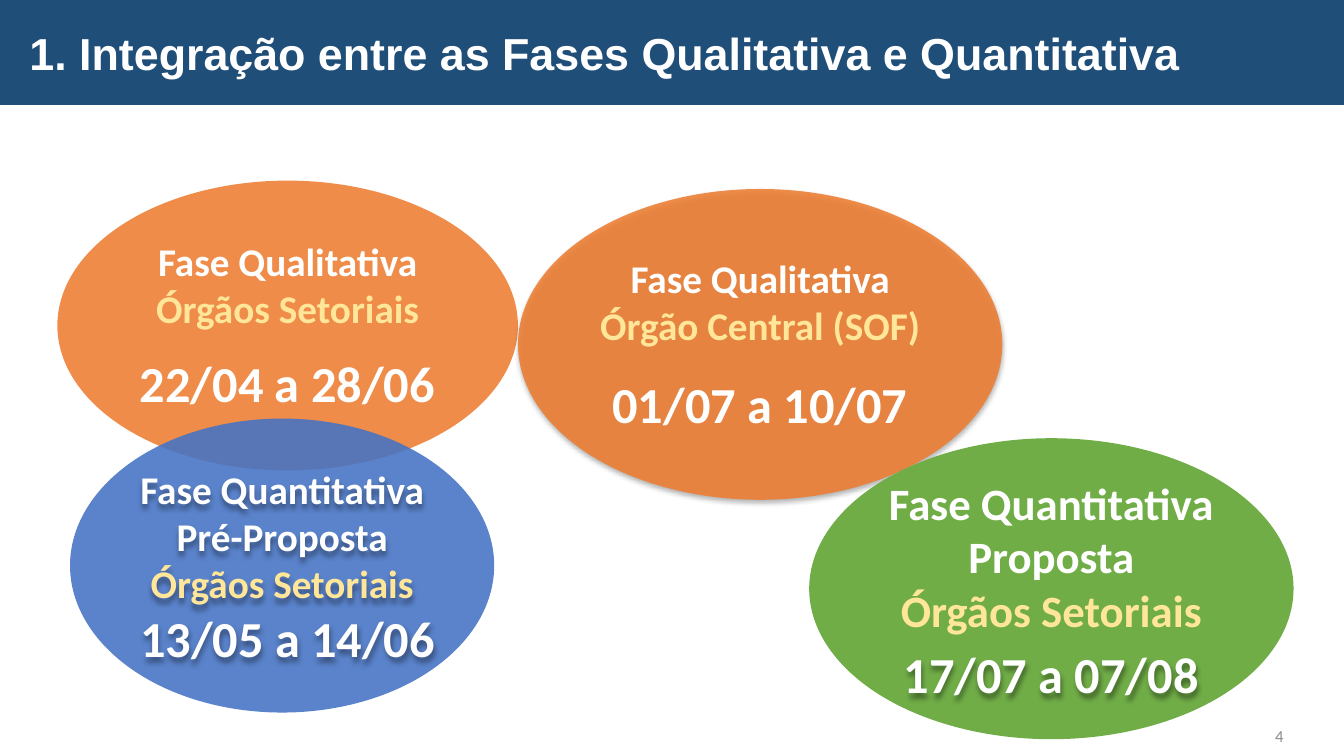
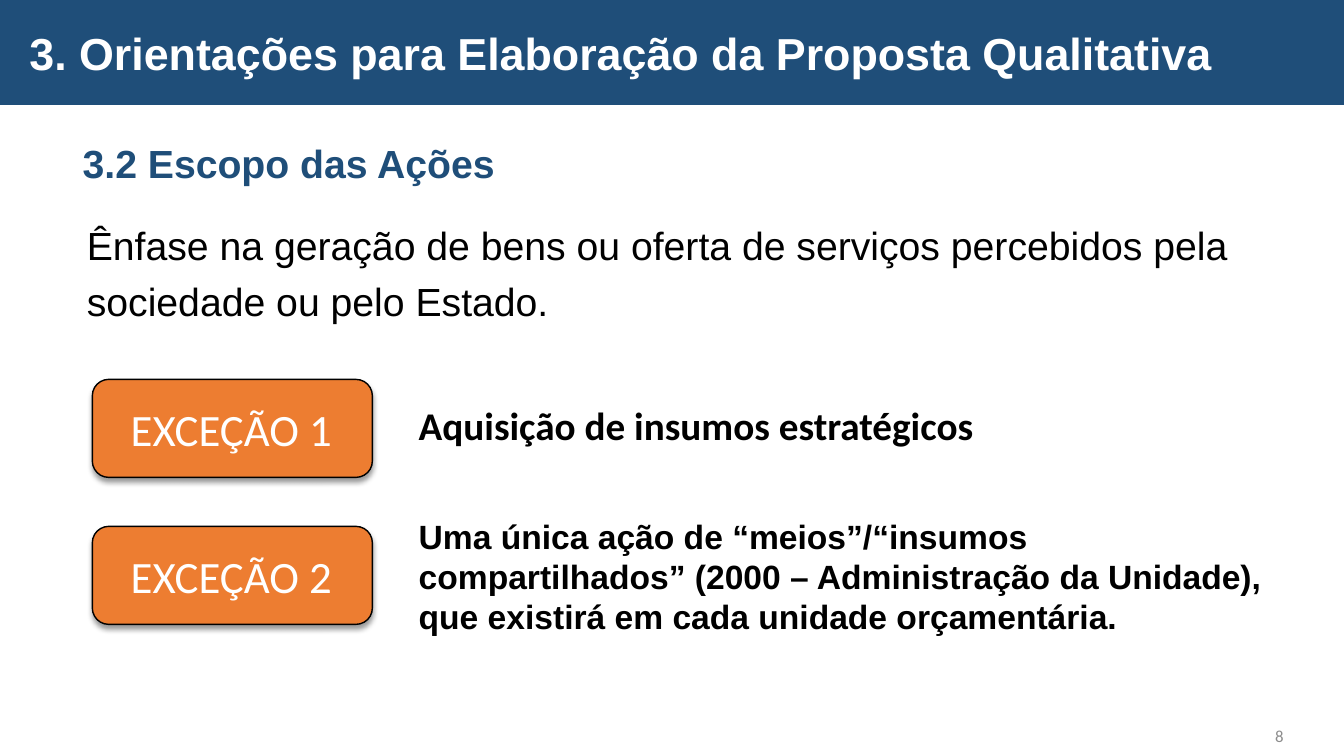
from lxml import etree
from pptx import Presentation
from pptx.dml import color
from pptx.enum import shapes, text
from pptx.oxml import ns
from pptx.util import Pt

COLORS = {
    "navy": "1F4E79", "orange": "ED7D31", "blue": "4472C4", "green": "70AD47",
    "cream": "FFE699", "white": "FFFFFF", "black": "000000", "gray": "8C8C8C",
}
OVAL = shapes.MSO_SHAPE.OVAL
ROUNDED = shapes.MSO_SHAPE.ROUNDED_RECTANGLE
LEFT, CENTER, RIGHT = text.PP_ALIGN.LEFT, text.PP_ALIGN.CENTER, text.PP_ALIGN.RIGHT
MIDDLE, TOP = text.MSO_ANCHOR.MIDDLE, text.MSO_ANCHOR.TOP
TITLE = {"name": "Arial", "size": Pt(32), "bold": True}
SUBTITLE = {"name": "Arial", "size": Pt(28), "bold": True}
BODY = {"name": "Arial", "size": Pt(28), "bold": False}
DETAIL = {"name": "Arial", "size": Pt(24), "bold": True}
PHASE = {"name": "Calibri", "size": Pt(28), "bold": True}
PROPOSAL = {"name": "Calibri", "size": Pt(32), "bold": True}
DATE = {"name": "Calibri", "size": Pt(36), "bold": True}
EXCEPTION = {"name": "Calibri", "size": Pt(32), "bold": False}
PAGE = {"name": "Calibri", "size": Pt(12), "bold": False}
SOFT = (40, 4, 3)
LIGHT = (32, 3.5, 2.2)


def add_box(slide, frame, preset=None, fill=None, opacity=100, outline=None, shadow=None):
    place = [Pt(length) for length in frame]
    if preset is None:
        box = slide.shapes.add_textbox(*place)
    else:
        box = slide.shapes.add_shape(preset, *place)
        box.fill.solid()
        box.fill.fore_color.rgb = color.RGBColor.from_string(COLORS[fill])
        if opacity < 100:
            tint = box.fill._xPr.find(".//" + ns.qn("a:srgbClr"))
            etree.SubElement(tint, ns.qn("a:alpha"), val=str(opacity * 1000))
        if outline:
            box.line.color.rgb = color.RGBColor.from_string(COLORS[outline])
            box.line.width = Pt(1)
        else:
            box.line.fill.background()
    box.shadow.inherit = False
    if shadow:
        strength, blur, distance = shadow
        effects = box._element.spPr.find(ns.qn("a:effectLst"))
        outer = etree.SubElement(
            effects, ns.qn("a:outerShdw"), blurRad=str(Pt(blur)),
            dist=str(Pt(distance)), dir="5400000", rotWithShape="0")
        tint = etree.SubElement(outer, ns.qn("a:srgbClr"), val=COLORS["black"])
        etree.SubElement(tint, ns.qn("a:alpha"), val=str(strength * 1000))
    return box


def write(box, lines, style, align=LEFT, anchor=TOP, inset=7.2, spacing=None):
    frame = box.text_frame
    layout = {"word_wrap": True, "vertical_anchor": anchor, "margin_left": Pt(inset)}
    for name, value in layout.items():
        setattr(frame, name, value)
    for index, (words, tone) in enumerate(lines):
        paragraph = frame.add_paragraph() if index else frame.paragraphs[0]
        paragraph.alignment = align
        if spacing:
            paragraph.line_spacing = Pt(spacing)
        run = paragraph.add_run()
        run.text = words
        for name, value in style.items():
            setattr(run.font, name, value)
        run.font.color.rgb = color.RGBColor.from_string(COLORS[tone])


deck = Presentation()
deck.slide_width, deck.slide_height = Pt(960), Pt(540)

pages = []
for title, number in [
    ("1. Integração entre as Fases Qualitativa e Quantitativa", "4"),
    ("3. Orientações para Elaboração da Proposta Qualitativa", "8"),
]:
    page = deck.slides.add_slide(deck.slide_layouts[6])
    band = add_box(page, (0, 0, 960, 75), shapes.MSO_SHAPE.RECTANGLE, "navy")
    write(band, [(title, "white")], TITLE, anchor=MIDDLE, inset=21)
    footer = add_box(page, (896, 511, 28, 29))
    write(footer, [(number, "gray")], PAGE, RIGHT, MIDDLE)
    pages.append(page)
schedule, scope = pages

phases = [
    {"frame": (41, 129, 329, 207), "fill": "orange", "opacity": 88, "style": PHASE,
     "names": ["Fase Qualitativa"], "owner": "Órgãos Setoriais", "top": 166,
     "dates": "22/04 a 28/06", "date_top": 248},
    {"frame": (50, 299, 303, 210), "fill": "blue", "opacity": 88, "style": PHASE,
     "names": ["Fase Quantitativa", "Pré-Proposta"], "owner": "Órgãos Setoriais", "top": 329,
     "dates": "13/05 a 14/06", "date_top": 430, "date_shift": 4,
     "name_shadow": SOFT, "date_shadow": SOFT},
    {"frame": (370, 135, 346, 222), "fill": "orange", "opacity": 88, "style": PHASE,
     "names": ["Fase Qualitativa"], "owner": "Órgão Central (SOF)", "top": 178,
     "dates": "01/07 a 10/07", "date_top": 263, "shadow": LIGHT},
    {"frame": (578, 313, 346, 215), "fill": "green", "opacity": 100, "style": PROPOSAL,
     "names": ["Fase Quantitativa", "Proposta"], "owner": "Órgãos Setoriais", "top": 336,
     "dates": "17/07 a 07/08", "date_top": 456, "date_shadow": SOFT},
]
for phase in phases:
    left, _, width, _ = phase["frame"]
    add_box(schedule, phase["frame"], OVAL, phase["fill"], phase["opacity"],
            shadow=phase.get("shadow"))
    names = [(name, "white") for name in phase["names"]] + [(phase["owner"], "cream")]
    height = 7 + len(names) * phase["style"]["size"].pt * 1.22
    heading = add_box(schedule, (left, phase["top"], width, height),
                      shadow=phase.get("name_shadow"))
    write(heading, names, phase["style"], CENTER)
    date_left = left + phase.get("date_shift", 0)
    dates = add_box(schedule, (date_left, phase["date_top"], width, 51),
                    shadow=phase.get("date_shadow"))
    write(dates, [(phase["dates"], "white")], DATE, CENTER)

subtitle = add_box(scope, (52, 96, 880, 41))
write(subtitle, [("3.2 Escopo das Ações", "navy")], SUBTITLE)
emphasis = add_box(scope, (55, 148, 880, 88))
write(emphasis, [("Ênfase na geração de bens ou oferta de serviços percebidos pela "
                  "sociedade ou pelo Estado.", "black")], BODY, spacing=40)

exceptions = [
    ("Aquisição de insumos estratégicos", PHASE, 283, 41, None),
    ("Uma única ação de “meios”/“insumos compartilhados” (2000 – Administração da "
     "Unidade), que existirá em cada unidade orçamentária.", DETAIL, 365, 94, 28.6),
]
for index, (words, style, top, height, spacing) in enumerate(exceptions):
    badge = add_box(scope, (66, 271 + index * 105, 200, 70), ROUNDED, "orange",
                    outline="black", shadow=SOFT)
    write(badge, [(f"EXCEÇÃO {index + 1}", "white")], EXCEPTION, anchor=MIDDLE, inset=24)
    detail = add_box(scope, (292, top, 644, height))
    write(detail, [(words, "black")], style, spacing=spacing)

deck.save("out.pptx")
